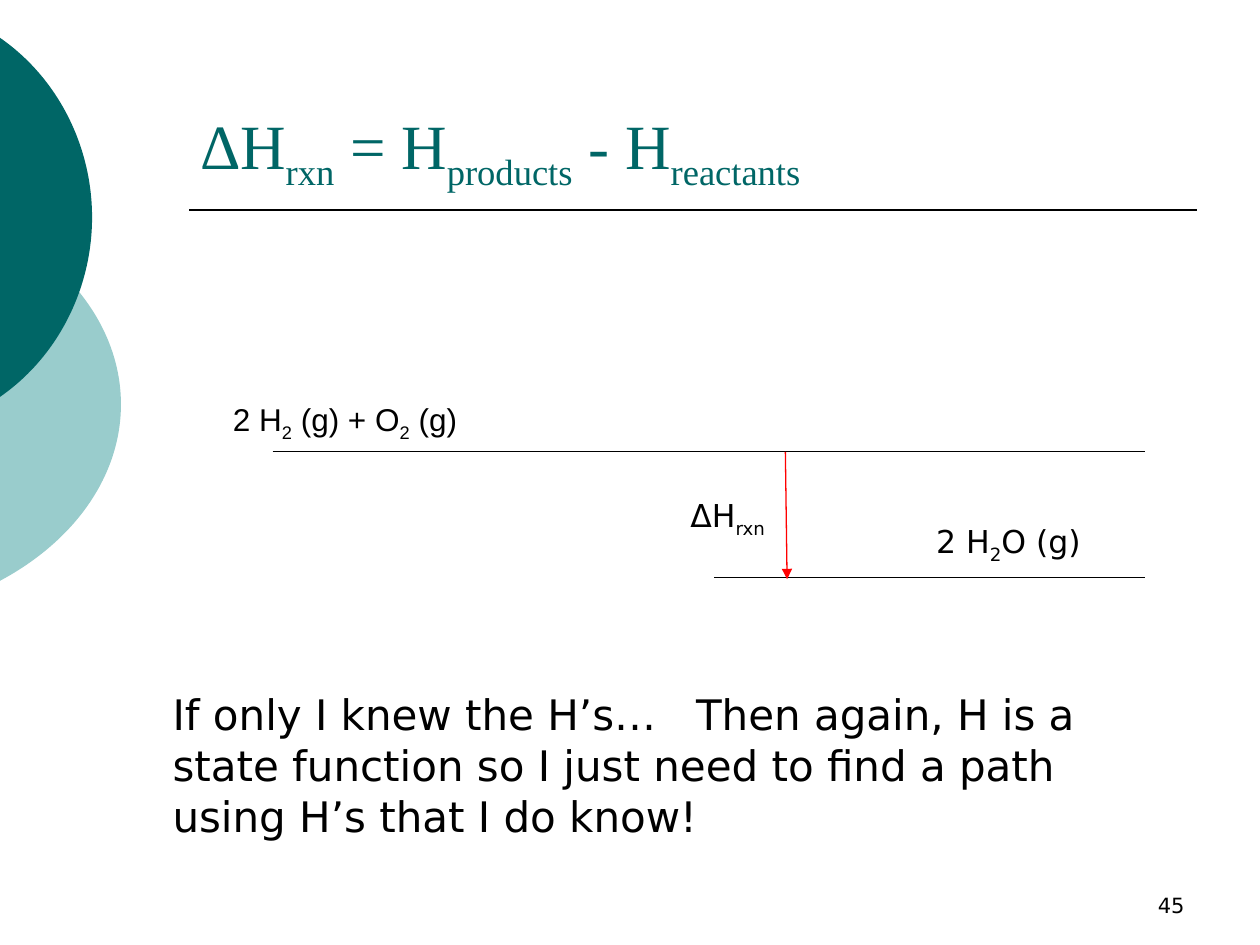
"""Build the reaction enthalpy slide."""
from dataclasses import dataclass

from lxml.etree import SubElement
from pptx import Presentation
from pptx.dml.color import RGBColor as Rgb
from pptx.enum.shapes import MSO_CONNECTOR as Conn
from pptx.enum.text import MSO_ANCHOR as Anchor, MSO_AUTO_SIZE as Fit, PP_ALIGN as Align
from pptx.oxml.ns import qn
from pptx.util import Pt

Point = tuple[float, float]


@dataclass(frozen=True)
class Theme:
    """Colours, fonts and type sizes."""
    dark: Rgb = Rgb(0x00, 0x66, 0x66)
    light: Rgb = Rgb(0x99, 0xCC, 0xCC)
    ink: Rgb = Rgb(0, 0, 0)
    arrow: Rgb = Rgb(0xFF, 0, 0)
    serif: str = "Times New Roman"
    sans: str = "DejaVu Sans"
    arial: str = "Arial"
    title: float = 36
    body: float = 24
    label: float = 18
    number: float = 12


T = Theme()


@dataclass(frozen=True)
class Arc:
    """A disc cut by the left slide edge, inside its full frame."""
    x: float
    y: float
    w: float
    h: float
    top: float
    shoulder: float
    flank: float
    middle: float
    reach: float
    color: Rgb


@dataclass(frozen=True)
class Line:
    """A straight line, with an optional arrowhead."""
    x1: float
    y1: float
    x2: float
    y2: float
    width: float = 0.75
    color: Rgb = T.ink
    arrow: bool = False


@dataclass(frozen=True)
class Label:
    """A text box; an underscore before a piece makes it subscript."""
    x: float
    y: float
    w: float
    h: float
    pieces: tuple[str, ...]
    size: float = T.label
    font: str = T.sans
    wrap: bool = False
    align: Align = Align.LEFT
    anchor: Anchor = Anchor.TOP
    leading: float | None = None


ARCS = (
    Arc(-254.9, 54, 324, 246.2, 130.3, 153.4, 190.8, 231.1, 43.2, T.light),
    Arc(-190.8, 0, 243.4, 248.4, 21.6, 44.6, 83.5, 124.2, 33.1, T.dark),
)
LINES = (
    Line(108, 120, 684, 120, width=1),
    Line(155.8, 258, 654.5, 258),
    Line(408.2, 330, 654.5, 330),
    Line(448.8, 258.2, 449.8, 331, color=T.arrow, arrow=True),
)
TITLE = ("∆H", "_rxn", " = H", "_products", " - H", "_reactants")
LABELS = (
    Label(126, 225, 145.4, 28.8, ("2 H", "_2", " (g) + O", "_2", " (g)"), font=T.arial),
    Label(91.5, 389.8, 562.3, 94.3,
          ("If only I knew the H’s…   Then again, H is a state function "
           "so I just need to find a path using H’s that I do know!",),
          size=T.body, wrap=True, leading=29),
    Label(387.4, 280.1, 61.2, 28.8, ("ΔH", "_rxn")),
    Label(527.8, 294.8, 102.2, 28.8, ("2 H", "_2", "O (g)")),
    Label(516.2, 491.8, 167.8, 36, ("45",), size=T.number, wrap=True,
          align=Align.RIGHT, anchor=Anchor.BOTTOM),
)


def add_step(outline, tag: str, arc: Arc, *points: Point) -> None:
    """Add one outline command, with its points measured from the frame."""
    step = SubElement(outline, qn(tag))
    for x, y in points:
        SubElement(step, qn("a:pt"), x=str(Pt(x - arc.x)), y=str(Pt(y - arc.y)))


def draw_arc(s, arc: Arc) -> None:
    """Draw the arc as two mirrored curves closed along the slide edge."""
    right = arc.x + arc.w
    upper = [(0, arc.top), (arc.reach, arc.shoulder), (right, arc.flank), (right, arc.middle)]
    lower = [(x, 2 * arc.middle - y) for x, y in reversed(upper[:-1])]

    fb = s.shapes.build_freeform(0, 0)
    fb.add_line_segments([(Pt(arc.w), Pt(arc.h))])
    sp = fb.convert_to_shape()
    sp.left, sp.top, sp.width, sp.height = Pt(arc.x), Pt(arc.y), Pt(arc.w), Pt(arc.h)
    outline = sp._element.find(".//" + qn("a:path"))
    for step in list(outline):
        outline.remove(step)
    add_step(outline, "a:moveTo", arc, upper[0])
    add_step(outline, "a:cubicBezTo", arc, *upper[1:])
    add_step(outline, "a:cubicBezTo", arc, *lower)
    add_step(outline, "a:close", arc)
    sp.shadow.inherit = False
    sp.fill.solid()
    sp.fill.fore_color.rgb = arc.color
    sp.line.fill.background()


def draw_line(s, line: Line) -> None:
    """Draw a line without a shadow."""
    sp = s.shapes.add_connector(
        Conn.STRAIGHT, Pt(line.x1), Pt(line.y1), Pt(line.x2), Pt(line.y2))
    sp.line.width = Pt(line.width)
    sp.line.color.rgb = line.color
    if line.arrow:
        SubElement(sp.line._get_or_add_ln(), qn("a:tailEnd"), type="triangle")
    SubElement(sp._element.spPr, qn("a:effectLst"))


def add_runs(p, pieces: tuple[str, ...], font: str, size: float, color: Rgb) -> None:
    """Add text run by run, lowering the marked pieces."""
    for piece in pieces:
        r = p.add_run()
        r.text = piece.removeprefix("_")
        r.font.name = font
        r.font.size = Pt(size)
        r.font.color.rgb = color
        if piece.startswith("_"):
            r.font._element.set("baseline", "-25000")


def draw_label(s, label: Label) -> None:
    """Draw a text box."""
    sp = s.shapes.add_textbox(Pt(label.x), Pt(label.y), Pt(label.w), Pt(label.h))
    tf = sp.text_frame
    tf.word_wrap = label.wrap
    tf.vertical_anchor = label.anchor
    p = tf.paragraphs[0]
    p.alignment = label.align
    if label.leading:
        p.line_spacing = Pt(label.leading)
    add_runs(p, label.pieces, label.font, label.size, T.ink)


def draw_title(s) -> None:
    """Place and fill the title placeholder."""
    sp = s.shapes.title
    sp.left, sp.top, sp.width, sp.height = Pt(108), Pt(23.6), Pt(576), Pt(90)
    tf = sp.text_frame
    tf.auto_size = Fit.NONE
    tf.vertical_anchor = Anchor.BOTTOM
    p = tf.paragraphs[0]
    p.alignment = Align.LEFT
    add_runs(p, TITLE, T.serif, T.title, T.dark)


def main() -> None:
    """Build and save the slide."""
    prs = Presentation()
    prs.slide_width, prs.slide_height = Pt(720), Pt(540)
    s = prs.slides.add_slide(prs.slide_layouts[5])
    for arc in ARCS:
        draw_arc(s, arc)
    draw_title(s)
    for line in LINES:
        draw_line(s, line)
    for label in LABELS:
        draw_label(s, label)
    prs.save("out.pptx")


if __name__ == "__main__":
    main()
